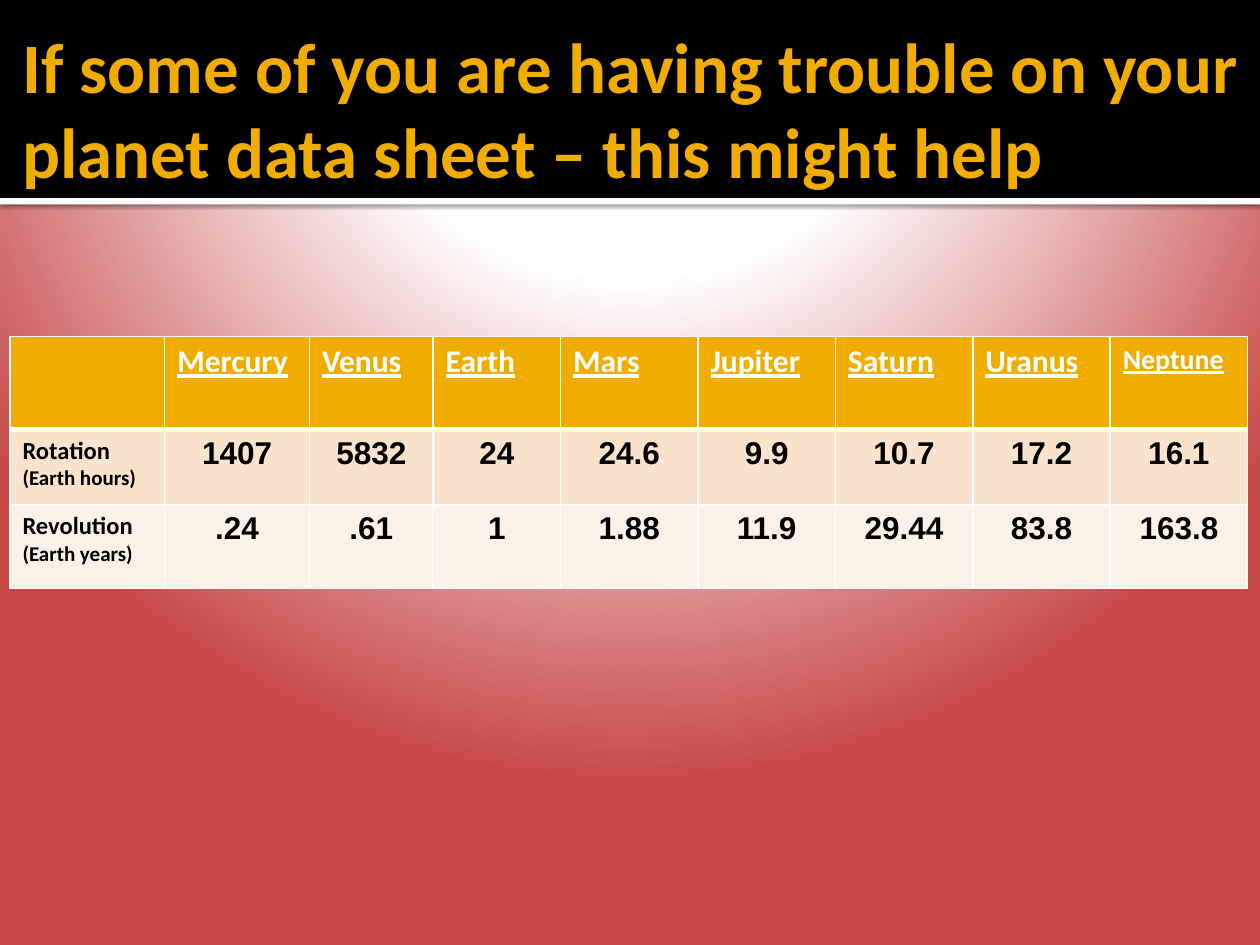
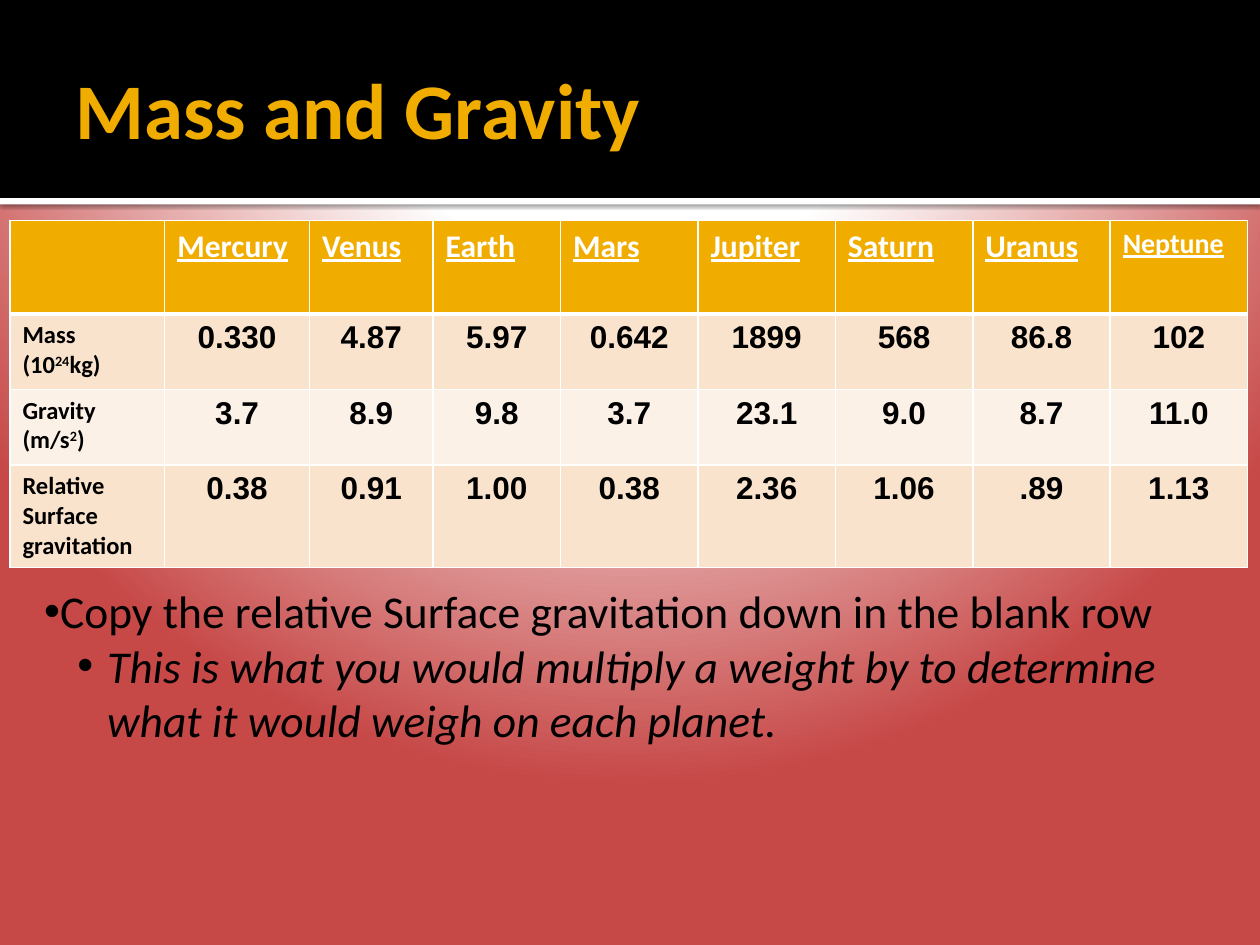
from dataclasses import dataclass

from pptx import Presentation
from pptx import util as u
from pptx.dml.color import RGBColor
from pptx.enum import shapes, text
from pptx.oxml import parse_xml
from pptx.oxml.ns import nsdecls

GOLD, WHITE, BLACK, RED = "F0AD00", "FFFFFF", "000000", "C64847"
ROW_FILLS = ("F9E3CC", "FCF1E7")
BODY_FONT, NUMBER_FONT = "Calibri", "Arial"

PLANETS = ("Mercury", "Venus", "Earth", "Mars", "Jupiter", "Saturn", "Uranus", "Neptune")
COLUMN_WIDTHS = (3.12, 2.92, 2.49, 2.57) + (2.77,) * 5
HEADER_HEIGHT, ROW_HEIGHT = 1.88, 1.52
TABLE_LEFT = 0.2


@dataclass(frozen=True)
class Span:
    words: str
    size: float = 14
    font: str = BODY_FONT
    color: str = BLACK
    bold: bool = True
    italic: bool = False
    underline: bool = False
    raised: bool = False


@dataclass(frozen=True)
class Title:
    words: str
    left: float
    width: float
    size: float


@dataclass(frozen=True)
class Measure:
    """One table row: label paragraphs made of spans, then a value per planet."""
    label: tuple[tuple[Span, ...], ...]
    values: tuple[str, ...]
    height: float = ROW_HEIGHT


def rgb(code: str) -> RGBColor:
    return RGBColor.from_string(code)


def add_span(para, item: Span) -> None:
    span = para.add_run()
    span.text = item.words
    font = span.font
    font.name, font.size = item.font, u.Pt(item.size)
    font.bold, font.italic, font.underline = item.bold, item.italic, item.underline
    font.color.rgb = rgb(item.color)
    if item.raised:
        span._r.get_or_add_rPr().set("baseline", "30000")


def write(frame, paragraphs, align=text.PP_ALIGN.LEFT) -> None:
    for index, spans in enumerate(paragraphs):
        para = frame.add_paragraph() if index else frame.paragraphs[0]
        para.alignment = align
        for item in spans:
            add_span(para, item)


def set_background(layout) -> None:
    stops = "".join(
        f'<a:gs pos="{place * 1000}"><a:srgbClr val="{color}"/></a:gs>'
        for place, color in ((0, WHITE), (35, WHITE), (100, RED)))
    layout._element.cSld.insert(0, parse_xml(
        f'<p:bg {nsdecls("p", "a")}><p:bgPr><a:gradFill rotWithShape="1">'
        f'<a:gsLst>{stops}</a:gsLst><a:path path="circle">'
        '<a:fillToRect l="50000" t="-80000" r="50000" b="180000"/></a:path>'
        '</a:gradFill><a:effectLst/></p:bgPr></p:bg>'))


def add_bands(page, layout) -> None:
    """Draw the title bands and move them behind the layout's placeholders."""
    bands = ((3.99, 0.13, WHITE), (0, 3.99, BLACK))
    for index, (top, height, color) in enumerate(bands):
        band = page.shapes.add_shape(
            shapes.MSO_SHAPE.RECTANGLE, 0, u.Cm(top), u.Cm(25.4), u.Cm(height))
        band.fill.solid()
        band.fill.fore_color.rgb = rgb(color)
        band.line.fill.background()
        band.shadow.inherit = False
        if color == WHITE:
            effects = band._element.spPr.find(
                "{http://schemas.openxmlformats.org/drawingml/2006/main}effectLst")
            effects.append(parse_xml(
                f'<a:outerShdw {nsdecls("a")} blurRad="{u.Pt(2.5)}" dist="{u.Pt(0.8)}" '
                f'dir="5400000"><a:srgbClr val="{BLACK}"><a:alpha val="60000"/>'
                '</a:srgbClr></a:outerShdw>'))
        layout.shapes._spTree.insert(2 + index, band._element)


def set_title(page, title: Title) -> None:
    box = page.shapes.title
    box.left, box.top = u.Cm(title.left), u.Cm(0.43)
    box.width, box.height = u.Cm(title.width), u.Cm(3.48)
    frame = box.text_frame
    frame.word_wrap, frame.auto_size = True, text.MSO_AUTO_SIZE.NONE
    frame.vertical_anchor = text.MSO_ANCHOR.MIDDLE
    frame.margin_left = u.Cm(0.25)
    frame.margin_top = frame.margin_right = frame.margin_bottom = u.Cm(0.13)
    write(frame, [[Span(title.words, title.size, color=GOLD)]])


def style_cell(cell, fill: str, top: float = 1, bottom: float = 1) -> None:
    """Give the cell white borders, with widths in points, and a solid fill."""
    properties = cell._tc.get_or_add_tcPr()
    for side, width in (("L", 1), ("R", 1), ("T", top), ("B", bottom)):
        properties.append(parse_xml(
            f'<a:ln{side} {nsdecls("a")} w="{u.Pt(width)}"><a:solidFill>'
            f'<a:srgbClr val="{WHITE}"/></a:solidFill></a:ln{side}>'))
    cell.fill.solid()
    cell.fill.fore_color.rgb = rgb(fill)


def add_planet_table(page, top: float, measures: tuple[Measure, ...]) -> None:
    heights = [HEADER_HEIGHT] + [measure.height for measure in measures]
    table = page.shapes.add_table(
        len(heights), len(COLUMN_WIDTHS), u.Cm(TABLE_LEFT), u.Cm(top),
        u.Cm(sum(COLUMN_WIDTHS)), u.Cm(sum(heights))).table
    for column, width in zip(table.columns, COLUMN_WIDTHS):
        column.width = u.Cm(width)
    for row, height in zip(table.rows, heights):
        row.height = u.Cm(height)

    for index in range(len(COLUMN_WIDTHS)):
        style_cell(table.cell(0, index), GOLD, bottom=3)
    for index, planet in enumerate(PLANETS, 1):
        size = 16 if planet == "Neptune" else 18
        write(table.cell(0, index).text_frame,
              [[Span(planet, size, color=WHITE, underline=True)]])

    for number, measure in enumerate(measures, 1):
        for index in range(len(COLUMN_WIDTHS)):
            style_cell(table.cell(number, index), ROW_FILLS[(number - 1) % 2],
                       top=3 if number == 1 else 1)
        write(table.cell(number, 0).text_frame, measure.label)
        for index, value in enumerate(measure.values, 1):
            write(table.cell(number, index).text_frame,
                  [[Span(value, 18, NUMBER_FONT)]], text.PP_ALIGN.CENTER)


def add_bullets(page) -> None:
    box = page.shapes.add_textbox(u.Cm(0.64), u.Cm(11.63), u.Cm(23.93), u.Cm(3.58))
    frame = box.text_frame
    frame.word_wrap = True
    frame.auto_size = text.MSO_AUTO_SIZE.SHAPE_TO_FIT_TEXT
    write(frame, [
        [Span("Copy the relative Surface gravitation down in the blank row", 26, bold=False)],
        [Span("This is what you would multiply a weight by to determine what it would "
              "weigh on each planet.", 26, bold=False, italic=True)]])
    for level, (para, margin, indent) in enumerate(
            zip(frame.paragraphs, (0, 1.27), (0, -0.6))):
        para.level = level
        properties = para._p.get_or_add_pPr()
        properties.set("marL", str(u.Cm(margin)))
        properties.set("indent", str(u.Cm(indent)))
        properties.append(parse_xml(f'<a:buFont {nsdecls("a")} typeface="{NUMBER_FONT}"/>'))
        properties.append(parse_xml(f'<a:buChar {nsdecls("a")} char="•"/>'))


PERIODS = (
    Measure(((Span("Rotation "), Span("(Earth hours)", 12)),),
            ("1407", "5832", "24", "24.6", "9.9", "10.7", "17.2", "16.1")),
    Measure(((Span("Revolution"),), (Span("(Earth years)", 12),)),
            (".24", ".61", "1", "1.88", "11.9", "29.44", "83.8", "163.8"), 1.68),
)
FORCES = (
    Measure(((Span("Mass"),), (Span("(10"), Span("24", raised=True), Span("kg)"))),
            ("0.330", "4.87", "5.97", "0.642", "1899", "568", "86.8", "102")),
    Measure(((Span("Gravity"),), (Span("(m/s"), Span("2", raised=True), Span(")"))),
            ("3.7", "8.9", "9.8", "3.7", "23.1", "9.0", "8.7", "11.0")),
    Measure(((Span("Relative"),), (Span("Surface"),), (Span("gravitation"),)),
            ("0.38", "0.91", "1.00", "0.38", "2.36", "1.06", ".89", "1.13"), 2.07),
)


def main() -> None:
    deck = Presentation()
    deck.slide_width, deck.slide_height = u.Cm(25.4), u.Cm(19.05)
    layout = deck.slide_layouts.get_by_name("Title Only")
    set_background(layout)

    page = deck.slides.add_slide(layout)
    add_bands(page, layout)
    set_title(page, Title("If some of you are having trouble on your planet data sheet "
                          "– this might help", 0.2, 25.2, 40.5))
    add_planet_table(page, 6.78, PERIODS)

    page = deck.slides.add_slide(layout)
    set_title(page, Title("Mass and Gravity", 1.27, 22.86, 45))
    add_planet_table(page, 4.45, FORCES)
    add_bullets(page)

    deck.save("out.pptx")


if __name__ == "__main__":
    main()
